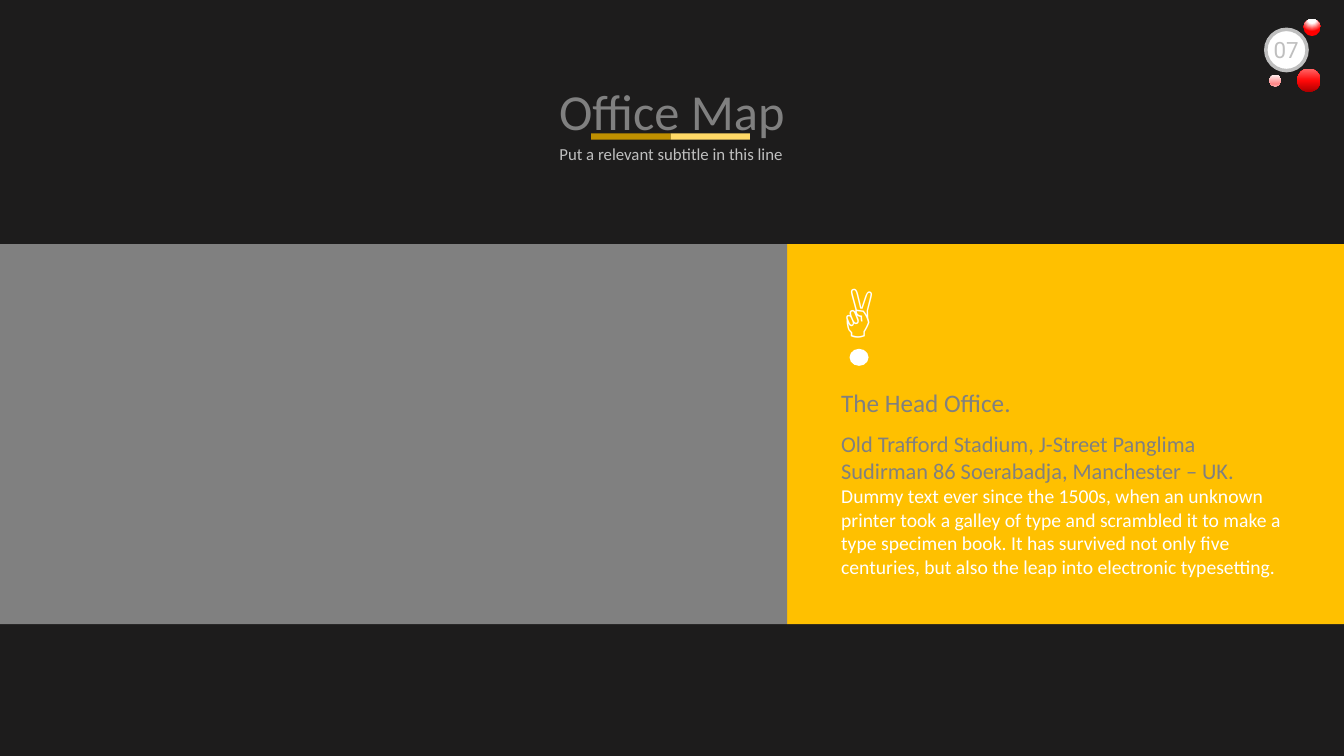
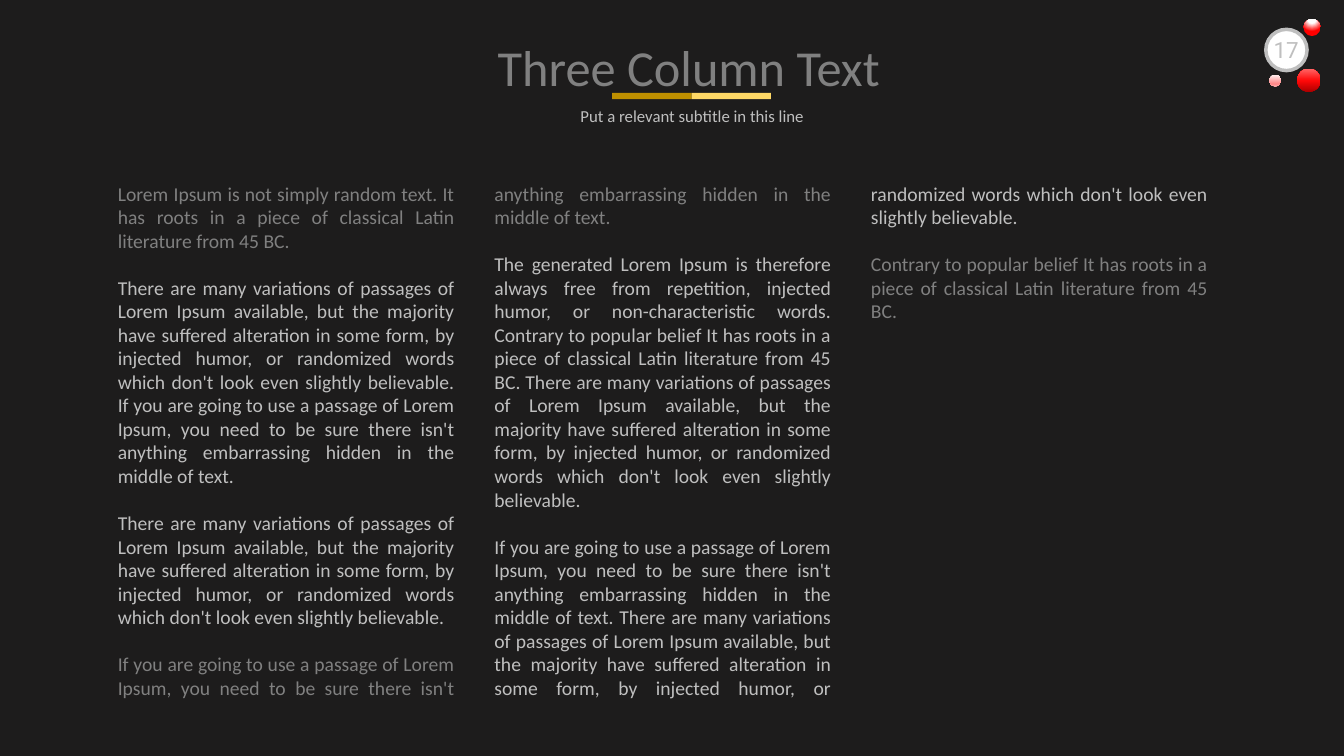
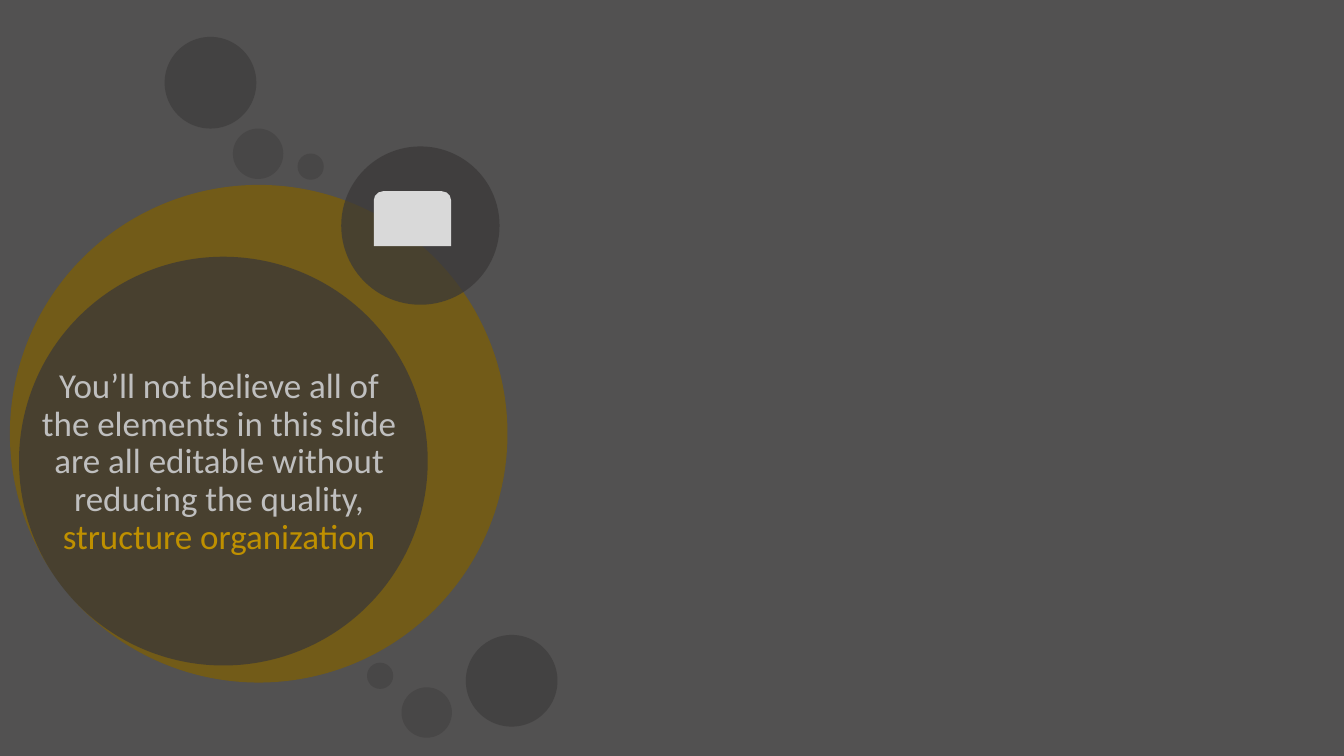
import pptx
import pptx.util
import pptx.dml.color
import pptx.enum.shapes
import pptx.enum.text
import pptx.oxml
import pptx.oxml.ns

Cm, Pt = pptx.util.Cm, pptx.util.Pt
Shape = pptx.enum.shapes.MSO_SHAPE
Align = pptx.enum.text.PP_ALIGN
Anchor = pptx.enum.text.MSO_ANCHOR
Fit = pptx.enum.text.MSO_AUTO_SIZE

WIDTH, HEIGHT = 33.87, 19.05
INK, WHITE, GRAY, SILVER, PALE = "1D1C1C", "FFFFFF", "808080", "BFBFBF", "D9D9D9"
AMBER, DARK_GOLD, LIGHT_GOLD, BROWN, SHADE = "FFC000", "BF9000", "FFD966", "806000", "3A3838"
BODY, NUMERAL = "Calibri", "Roboto"

# Gradients: stops in percent, then the direction element
GLOSS = ([(0, "FFFFFF"), (35, "FFFFFF"), (100, "FF0000")],
         '<a:path path="circle"><a:fillToRect l="50000" t="-80000" r="50000" b="180000"/></a:path>')
RUBY = ([(0, "AB0000"), (48, "FF0808"), (100, "FF6666")], '<a:lin ang="16200000" scaled="0"/>')
PINK = ([(0, "FFF2F2"), (74, "FF8C8C"), (83, "FF8C8C"), (100, "FFB2B2")],
        '<a:lin ang="5400000" scaled="0"/>')

# Sentences reused in the column text
ROOTS = "has roots in a piece of classical Latin literature from 45 BC."
VARIATIONS = ("There are many variations of passages of Lorem Ipsum available, but the majority have "
              "suffered alteration in some form, by injected humor, or randomized words which don't "
              "look even slightly believable.")
PASSAGE = ("If you are going to use a passage of Lorem Ipsum, you need to be sure there isn't "
           "anything embarrassing hidden in the middle of text.")
CONTRARY = "Contrary to popular belief It " + ROOTS
COLUMN_TEXT = [
    ("Lorem Ipsum is not simply random text. It " + ROOTS, GRAY),
    (f"{VARIATIONS} {PASSAGE}", SILVER),
    (VARIATIONS, SILVER),
    (PASSAGE, GRAY),
    ("The generated Lorem Ipsum is therefore always free from repetition, injected humor, or "
     f"non-characteristic words. {CONTRARY} {VARIATIONS}", SILVER),
    (f"{PASSAGE} {VARIATIONS}", SILVER),
    (CONTRARY, GRAY),
]


def color(value):
    return pptx.dml.color.RGBColor.from_string(value)


def assign(target, values):
    for name, value in values.items():
        setattr(target, name, value)


def place(box):
    return [Cm(length) for length in box]


def add_figure(page, kind, box, fill, opacity=100, line=None):
    """Add a preset shape; fill is a hex string or a gradient."""
    figure = page.shapes.add_shape(kind, *place(box))
    figure.shadow.inherit = False
    if isinstance(fill, str):
        figure.fill.solid()
        figure.fill.fore_color.rgb = color(fill)
        if opacity < 100:
            hue = figure.fill._xPr.find(".//" + pptx.oxml.ns.qn("a:srgbClr"))
            hue.append(pptx.oxml.parse_xml(
                f'<a:alpha {pptx.oxml.ns.nsdecls("a")} val="{opacity * 1000}"/>'))
    else:
        stops, direction = fill
        marks = "".join(f'<a:gs pos="{at * 1000}"><a:srgbClr val="{hue}"/></a:gs>'
                        for at, hue in stops)
        geometry = figure._element.spPr.find(pptx.oxml.ns.qn("a:prstGeom"))
        geometry.addnext(pptx.oxml.parse_xml(
            f'<a:gradFill {pptx.oxml.ns.nsdecls("a")} rotWithShape="1">'
            f'<a:gsLst>{marks}</a:gsLst>{direction}</a:gradFill>'))
    if line:
        figure.line.color.rgb = color(line)
        figure.line.width = Pt(2.5)
    else:
        figure.line.fill.background()
    return figure


def add_text(page, box, paras, frame=None):
    """Add a text box; paras holds (format, spans), a span (text, size, hue, font)."""
    area = page.shapes.add_textbox(*place(box)).text_frame
    assign(area, {"word_wrap": True, "auto_size": Fit.NONE, **(frame or {})})
    for index, (layout, spans) in enumerate(paras):
        para = area.paragraphs[0] if index == 0 else area.add_paragraph()
        assign(para, layout)
        for words, size, hue, font in spans:
            span = para.add_run()
            span.text = words
            assign(span.font, {"size": Pt(size), "name": font})
            span.font.color.rgb = color(hue)
    return area


def add_badge(page, number, left=31.78, top=0.48):
    """Page number in a ring with three red balls."""
    balls = [(0.12, 0.26, 1.04, WHITE, SILVER), (1.07, 0, 0.43, GLOSS, None),
             (0.91, 1.25, 0.59, RUBY, None), (0.21, 1.4, 0.3, PINK, None)]
    for x, y, size, fill, line in balls:
        add_figure(page, Shape.OVAL, (left + x, top + y, size, size), fill, line=line)
    add_text(page, (left, top + 0.31, 1.27, 0.94),
             [({"alignment": Align.CENTER}, [(number, 16, SILVER, NUMERAL)])])


def add_heading(page, title, title_box, rule_left, rule_top, subtitle_top):
    """Title, two-tone rule and a subtitle centred under the rule."""
    add_text(page, title_box, [({"alignment": Align.CENTER, "line_spacing": 1.5},
                                [(title, 36, GRAY, BODY)])])
    add_text(page, (rule_left - 2, subtitle_top, 8.03, 1.02),
             [({"alignment": Align.CENTER},
               [("Put a relevant subtitle in this line", 12, SILVER, BODY)])],
             {"vertical_anchor": Anchor.MIDDLE})
    for index, hue in enumerate((DARK_GOLD, LIGHT_GOLD)):
        add_figure(page, Shape.RECTANGLE, (rule_left + index * 2, rule_top, 2, 0.16), hue)


def add_address_panel(page, box):
    left, top = box[:2]
    add_figure(page, Shape.RECTANGLE, box, AMBER)
    # Hand sign and dot
    add_text(page, (left + 1.12, top + 0.66, 1.78, 2.13), [({}, [("✌", 44, WHITE, "Arial")])])
    add_figure(page, Shape.OVAL, (left + 1.57, top + 2.64, 0.48, 0.43), WHITE)
    # Address
    add_text(page, (left + 1.11, top + 3.48, 11.66, 5.46), [
        ({"space_after": Pt(6)}, [("The Head Office.", 18, GRAY, BODY)]),
        ({"space_before": Pt(3.3), "space_after": Pt(6)}, [
            ("Old Trafford Stadium, J-Street Panglima Sudirman 86 Soerabadja, Manchester – UK. ",
             16, GRAY, BODY),
            ("Dummy text ever since the 1500s, when an unknown printer took a galley of type and "
             "scrambled it to make a type specimen book. It has survived not only five centuries, "
             "but also the leap into electronic typesetting.", 14, WHITE, BODY)]),
    ])


def add_columns(page, box):
    layout = {"alignment": Align.JUSTIFY, "space_after": Pt(16.8)}
    area = add_text(page, box,
                    [(layout, [(words, 14, hue, BODY)]) for words, hue in COLUMN_TEXT],
                    {"margin_right": Cm(0.41), "margin_bottom": Cm(0.1)})
    settings = area._txBody.bodyPr
    settings.set("numCol", "3")
    settings.set("spcCol", str(int(Cm(1))))


def build_map(page):
    split, top, height = 19.84, 6.15, 9.58
    add_address_panel(page, (split, top, WIDTH - split, height))
    add_badge(page, "07")
    add_heading(page, "Office Map", (11.97, 1.14, 9.93, 2.34), 14.9, 3.36, 3.37)
    add_figure(page, Shape.RECTANGLE, (0, top, split, height), GRAY)


def build_columns(page):
    add_columns(page, (2.72, 4.45, 28.13, 13.39))
    add_badge(page, "17")
    add_heading(page, "Three Column Text", (10.11, 0.03, 14.5, 2.34), 15.43, 2.34, 2.42)


def build_bubbles(page):
    # Backdrop
    for hue, opacity in ((GRAY, 100), (SHADE, 65)):
        add_figure(page, Shape.RECTANGLE, (0, 0, WIDTH, HEIGHT), hue, opacity)
    # Bubbles: left, top, diameter, colour, opacity
    bubbles = [(0.25, 4.66, 12.54, BROWN, 70), (10.12, 17.32, 1.27, SHADE, 40),
               (11.74, 16, 2.31, SHADE, 60), (0.48, 6.47, 10.3, SHADE, 75),
               (9.25, 16.7, 0.66, SHADE, 40), (8.6, 3.69, 3.99, SHADE, 74),
               (7.5, 3.87, 0.66, SHADE, 40), (5.87, 3.24, 1.27, SHADE, 40),
               (4.15, 0.93, 2.31, SHADE, 60)]
    for left, top, size, hue, opacity in bubbles:
        add_figure(page, Shape.OVAL, (left, top, size, size), hue, opacity)
    # Statement
    add_text(page, (0.71, 9.15, 9.62, 6.02), [
        ({"alignment": Align.CENTER, "line_spacing": 0.9}, [
            ("You’ll not believe all of the elements in this slide are all editable without "
             "reducing the quality, ", 25, SILVER, BODY),
            ("structure organization", 25, DARK_GOLD, BODY)])])
    # Emblem
    add_figure(page, Shape.ROUND_2_SAME_RECTANGLE, (9.42, 4.82, 1.95, 1.38), PALE)


def main():
    deck = pptx.Presentation()
    assign(deck, {"slide_width": Cm(WIDTH), "slide_height": Cm(HEIGHT)})
    backdrop = deck.slide_master.background.fill
    backdrop.solid()
    backdrop.fore_color.rgb = color(INK)
    for build in (build_map, build_columns, build_bubbles):
        build(deck.slides.add_slide(deck.slide_layouts[6]))
    deck.save("out.pptx")


if __name__ == "__main__":
    main()
